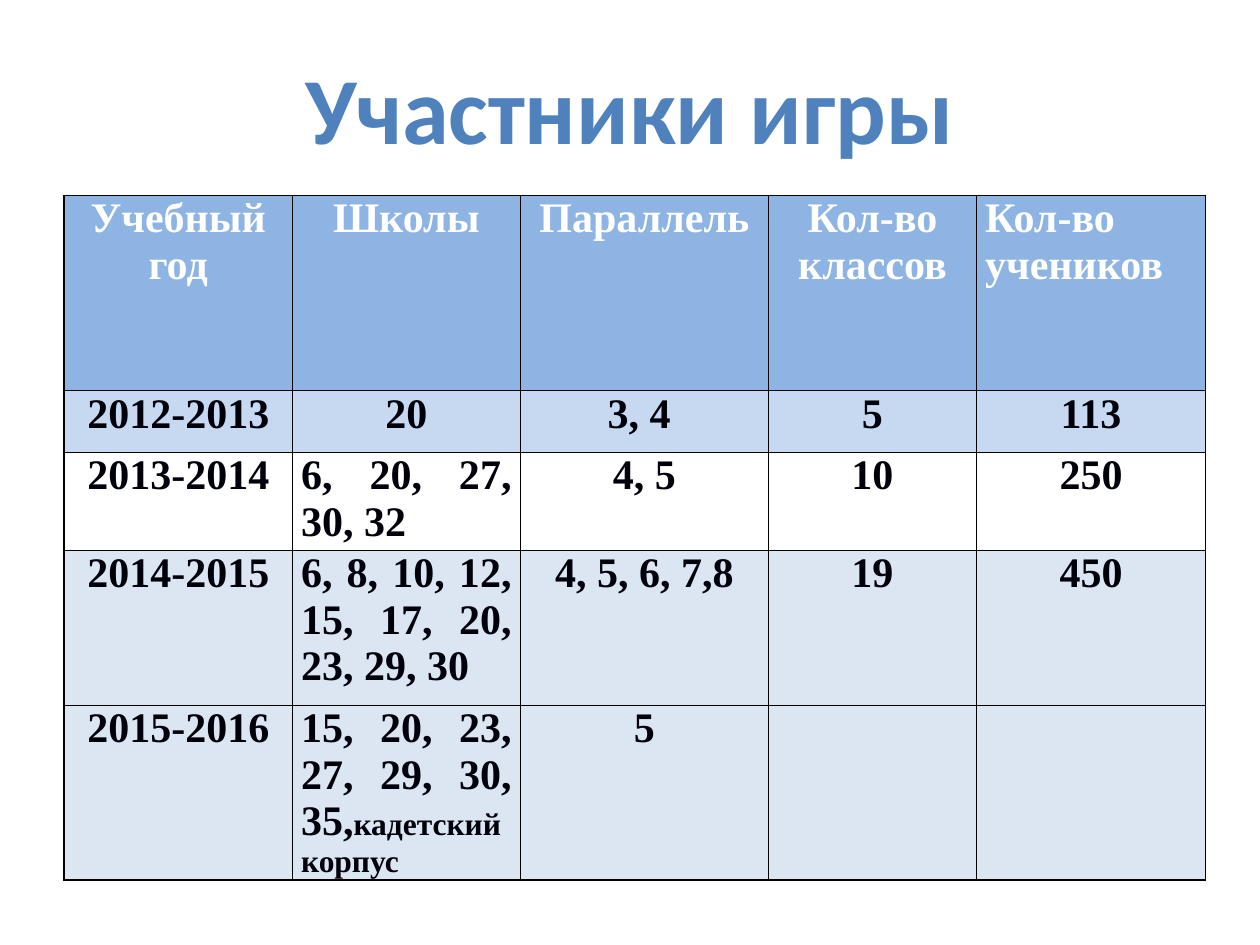
from lxml.etree import SubElement
from pptx import Presentation
from pptx.dml.color import RGBColor
from pptx.enum.text import MSO_ANCHOR, PP_ALIGN
from pptx.oxml.ns import qn
from pptx.util import Inches, Pt

BLUE = RGBColor(0x4F, 0x81, 0xBD)
WHITE = RGBColor(0xFF, 0xFF, 0xFF)
INK = RGBColor(0x00, 0x00, 0x0A)
BORDER = RGBColor(0x00, 0x00, 0x01)
HEADER = RGBColor(0x8E, 0xB4, 0xE3)
LIGHT = RGBColor(0xC6, 0xD9, 0xF1)
PALE = RGBColor(0xDC, 0xE6, 0xF2)

TITLE = "Участники игры"
# Each row: height, fill, text colour, cells; a cell is a list of (text, size) runs or plain text
ROWS = [
    (1.55, HEADER, WHITE,
     ["Учебный год", "Школы", "Параллель", "Кол-во классов", "Кол-во учеников"]),
    (0.49, LIGHT, INK, ["2012-2013", "20", "3, 4 ", "5", "113"]),
    (0.78, WHITE, INK, ["2013-2014", "6, 20, 27, 30, 32", "4, 5", "10", "250"]),
    (1.23, PALE, INK,
     ["2014-2015", "6, 8, 10, 12, 15, 17, 20, 23, 29, 30", "4, 5, 6, 7,8", "19", "450"]),
    (1.1, PALE, INK,
     ["2015-2016", [("15, 20, 23, 27, 29, 30, 35,", 24), ("кадетский корпус ", 18)],
      "5", "", ""]),
]
COL_WIDTHS = [1.81, 1.81, 1.97, 1.65, 1.82]
JUSTIFIED = {(0, 4), (2, 1), (3, 1), (4, 1)}
MARGINS = {"margin_left": Inches(0.07), "margin_right": Inches(0.07),
           "margin_top": 0, "margin_bottom": 0}


def set_attrs(obj, values):
    for name, value in values.items():
        setattr(obj, name, value)


def style_font(font, name, size, color):
    set_attrs(font, {"name": name, "size": Pt(size), "bold": True})
    font.color.rgb = color


def add_borders(cell):
    """Draw the four sides; line elements must precede the cell's fill."""
    tc_pr = cell._tc.get_or_add_tcPr()
    for i, side in enumerate(("lnL", "lnR", "lnT", "lnB")):
        ln = SubElement(tc_pr, qn(f"a:{side}"), w=str(Pt(1)))
        fill = SubElement(ln, qn("a:solidFill"))
        SubElement(fill, qn("a:srgbClr"), val=str(BORDER))
        tc_pr.insert(i, ln)


def fill_cell(cell, content, fill, color, align):
    set_attrs(cell, MARGINS)
    add_borders(cell)
    cell.fill.solid()
    cell.fill.fore_color.rgb = fill
    if not content:
        return
    p = cell.text_frame.paragraphs[0]
    p.alignment = align
    for text, size in ([(content, 24)] if isinstance(content, str) else content):
        r = p.add_run()
        r.text = text
        style_font(r.font, "Times New Roman", size, color)


prs = Presentation()
prs.slide_width, prs.slide_height = Inches(10), Inches(7.5)
slide = prs.slides.add_slide(prs.slide_layouts[5])

title = slide.shapes.title
set_attrs(title, {"left": Inches(0.5), "top": Inches(0.3),
                  "width": Inches(9), "height": Inches(1.09)})
tf = title.text_frame
tf.text = TITLE
tf.vertical_anchor = MSO_ANCHOR.MIDDLE
tf.paragraphs[0].alignment = PP_ALIGN.CENTER
style_font(tf.paragraphs[0].runs[0].font, "Calibri", 54, BLUE)

table = slide.shapes.add_table(
    len(ROWS), len(COL_WIDTHS), Inches(0.51), Inches(1.55),
    Inches(sum(COL_WIDTHS)), Inches(sum(row[0] for row in ROWS))).table
for column, width in zip(table.columns, COL_WIDTHS):
    column.width = Inches(width)
for i, (height, fill, color, cells) in enumerate(ROWS):
    table.rows[i].height = Inches(height)
    for j, content in enumerate(cells):
        align = PP_ALIGN.JUSTIFY if (i, j) in JUSTIFIED else PP_ALIGN.CENTER
        fill_cell(table.cell(i, j), content, fill, color, align)

prs.save("out.pptx")
